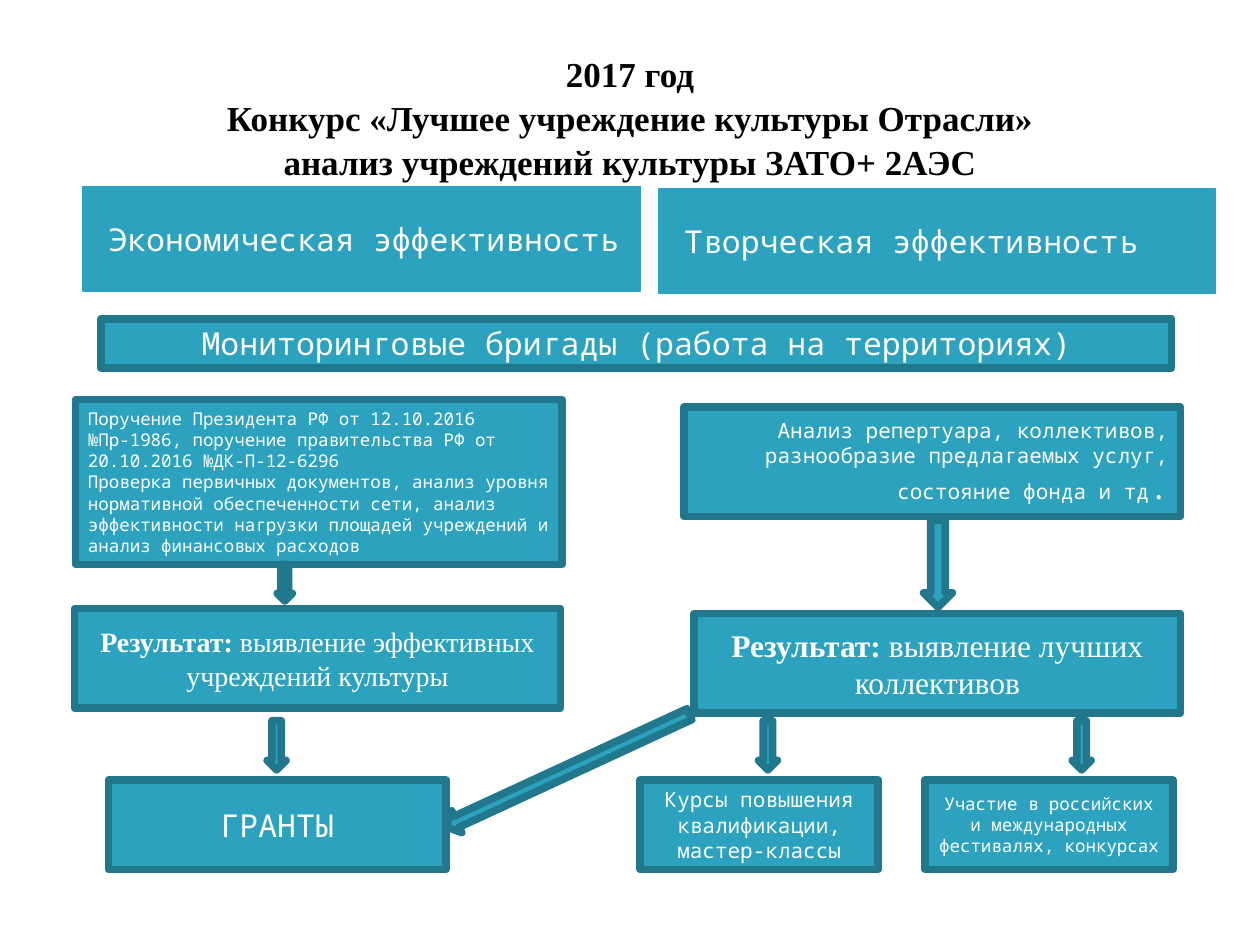
from copy import deepcopy

from pptx import Presentation
from pptx.dml.color import RGBColor
from pptx.enum.shapes import MSO_SHAPE
from pptx.enum.text import MSO_ANCHOR, MSO_AUTO_SIZE, PP_ALIGN
from pptx.oxml.ns import qn
from pptx.util import Inches, Pt

RECT, DOWN_ARROW = MSO_SHAPE.RECTANGLE, MSO_SHAPE.DOWN_ARROW
MIDDLE, NO_FIT = MSO_ANCHOR.MIDDLE, MSO_AUTO_SIZE.NONE
LEFT, CENTER, RIGHT = PP_ALIGN.LEFT, PP_ALIGN.CENTER, PP_ALIGN.RIGHT
MONO, SERIF = "Noto Sans Mono", "Times New Roman"
TEAL, DARK_TEAL, WHITE, BLACK = "2DA2BF", "21788D", "FFFFFF", "000000"


def paint(sp, line, width):
    sp.fill.solid()
    sp.fill.fore_color.rgb = RGBColor.from_string(TEAL)
    sp.line.color.rgb = RGBColor.from_string(line)
    sp.line.width = Pt(width)
    sp.shadow.inherit = False


def write(sp, paragraphs, size=18, font=MONO, color=WHITE, align=CENTER, before=None, spacing=None):
    """Each paragraph is a list of (text, format) runs; a newline is a line break."""
    tf = sp.text_frame
    tf.word_wrap = True
    tf.auto_size = NO_FIT
    tf.vertical_anchor = MIDDLE
    for i, runs in enumerate(paragraphs):
        p = tf.paragraphs[0] if i == 0 else tf.add_paragraph()
        p.alignment = align
        p.space_before = before
        p.line_spacing = spacing
        for text, fmt in runs:
            for j, part in enumerate(text.split("\n")):
                if j:
                    p.add_line_break()
                r = p.add_run()
                r.text = part
                r.font.size = Pt(fmt.get("size", size))
                r.font.name = font
                r.font.bold = fmt.get("bold", False)
                r.font.color.rgb = RGBColor.from_string(color)
        # Line breaks take the size of the text around them
        for br in p._p.findall(qn("a:br")):
            br.append(deepcopy(p.runs[0]._r.rPr))


prs = Presentation()
prs.slide_width, prs.slide_height = Inches(10), Inches(7.5)
s = prs.slides.add_slide(prs.slide_layouts[4])
title, left_head, left_list, right_head, right_list = s.placeholders
for unused in (left_list, right_list):
    unused._element.getparent().remove(unused._element)

# Title
title.left, title.top, title.width, title.height = Inches(0.5), Inches(0.3), Inches(9), Inches(1.25)
write(title, [[("2017 год\nКонкурс «Лучшее учреждение культуры Отрасли»\n"
                "анализ учреждений культуры ЗАТО+ 2АЭС", {"bold": True})]],
      size=20, font=SERIF, color=BLACK, spacing=1.04)

# Column headings
for sp, x, y, text in [
    (left_head, 0.66, 1.48, "Экономическая эффективность"),
    (right_head, 5.23, 1.5, "Творческая эффективность"),
]:
    sp.left, sp.top, sp.width, sp.height = Inches(x), Inches(y), Inches(4.42), Inches(0.83)
    paint(sp, TEAL, 0.75)
    sp.text_frame.margin_left = Inches(0.2)
    write(sp, [[(text, {})]], align=LEFT, before=Pt(4))

# Boxes of the scheme
bold = {"bold": True}
boxes = [
    (0.8, 2.53, 8.5, 0.39, [[("Мониторинговые бригады (работа на территориях)", {})]], {}),
    (0.6, 3.17, 3.86, 1.31, [
        [("Поручение Президента РФ от 12.10.2016 №Пр-1986, поручение правительства РФ "
          "от 20.10.2016 №ДК-П-12-6296", {})],
        [("Проверка первичных документов, анализ уровня нормативной обеспеченности сети, "
          "анализ эффективности нагрузки площадей учреждений и анализ финансовых расходов", {})],
    ], {"size": 10, "align": LEFT}),
    (5.43, 3.23, 3.94, 0.87, [
        [("Анализ репертуара, коллективов, разнообразие предлагаемых услуг, "
          "состояние фонда и тд", {}), (".", {"size": 18})],
    ], {"size": 12, "align": RIGHT}),
    (0.59, 4.83, 3.86, 0.79, [
        [("Результат:", bold), (" выявление эффективных учреждений культуры", {})],
    ], {"size": 16, "font": SERIF}),
    (5.51, 4.87, 3.86, 0.79, [
        [("Результат: ", bold), ("выявление лучших коллективов", {})],
    ], {"font": SERIF}),
    (0.86, 6.19, 2.68, 0.71, [[("ГРАНТЫ", {})]], {}),
    (5.08, 6.19, 1.89, 0.71,
     [[("Курсы повышения квалификации, мастер-классы", {})]], {"size": 12}),
    (7.34, 6.19, 1.97, 0.71,
     [[("Участие в российских и международных фестивалях, конкурсах", {})]], {"size": 10}),
]
for x, y, w, h, paragraphs, fmt in boxes:
    sp = s.shapes.add_shape(RECT, Inches(x), Inches(y), Inches(w), Inches(h))
    paint(sp, DARK_TEAL, 4.33)
    write(sp, paragraphs, **fmt)

# Block arrows, the last one slanting from the right result to the grants
for x, y, w, h, angle in [
    (2.2, 4.48, 0.12, 0.29, 0),
    (2.12, 5.72, 0.15, 0.39, 0),
    (8.51, 5.72, 0.15, 0.39, 0),
    (6.02, 5.72, 0.15, 0.39, 0),
    (7.33, 4.13, 0.23, 0.69, 0),
    (4.41, 5.05, 0.19, 2.13, 65.2),
]:
    sp = s.shapes.add_shape(DOWN_ARROW, Inches(x), Inches(y), Inches(w), Inches(h))
    sp.rotation = angle
    paint(sp, DARK_TEAL, 4.33)

prs.save("out.pptx")
